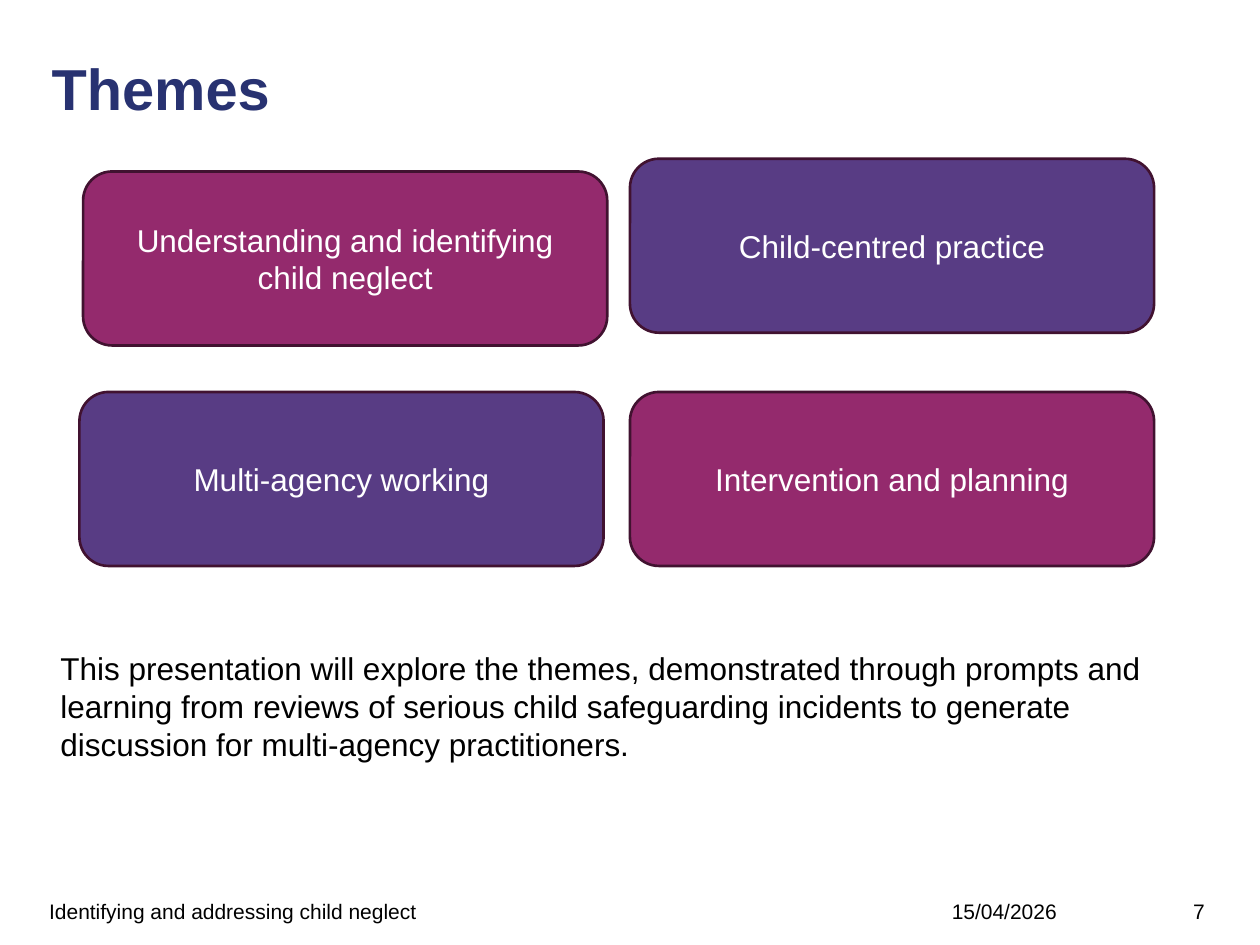
from lxml import etree
from pptx import Presentation
from pptx.dml.color import RGBColor
from pptx.enum import shapes, text
from pptx.oxml import ns
from pptx.util import Pt

NAVY = RGBColor(0x28, 0x32, 0x71)
MAGENTA = RGBColor(0x94, 0x2A, 0x6D)
PURPLE = RGBColor(0x58, 0x3C, 0x84)
OUTLINE = RGBColor(0x41, 0x12, 0x30)
BLACK = RGBColor(0, 0, 0)
WHITE = RGBColor(0xFF, 0xFF, 0xFF)


def place(shape, left, top, width, height):
    shape.left, shape.top, shape.width, shape.height = map(Pt, (left, top, width, height))


def write(shape, words, size=18, color=BLACK, bold=False, align=text.PP_ALIGN.LEFT,
          anchor=text.MSO_ANCHOR.MIDDLE, inset=0, line_spacing=1.0, after=0, plain=False):
    """Fill the shape with one paragraph; plain removes an inherited bullet."""
    frame = shape.text_frame
    frame.word_wrap = True
    frame.auto_size = text.MSO_AUTO_SIZE.NONE
    frame.vertical_anchor = anchor
    frame.margin_left = frame.margin_right = Pt(inset)
    frame.margin_top = frame.margin_bottom = Pt(inset / 2)
    paragraph = frame.paragraphs[0]
    paragraph.text = words
    paragraph.alignment = align
    paragraph.line_spacing = line_spacing
    paragraph.space_before = Pt(0)
    paragraph.space_after = Pt(after)
    if plain:
        properties = paragraph._p.get_or_add_pPr()
        properties.set("marL", "0")
        properties.set("indent", "0")
        etree.SubElement(properties, ns.qn("a:buNone"))
    font = paragraph.runs[0].font
    font.name, font.size, font.bold = "Arial", Pt(size), bold
    font.color.rgb = color


presentation = Presentation()
presentation.slide_width, presentation.slide_height = Pt(720), Pt(540)
slide = presentation.slides.add_slide(presentation.slide_layouts[1])

title, body = slide.placeholders
place(title, 29.5, 34.5, 662, 85)
write(title, "Themes", size=33, color=NAVY, bold=True,
      anchor=text.MSO_ANCHOR.TOP, line_spacing=0.9)

place(body, 34.5, 371, 662, 85)
write(body, "This presentation will explore the themes, demonstrated through prompts and "
      "learning from reviews of serious child safeguarding incidents to generate "
      "discussion for multi-agency practitioners.",
      anchor=text.MSO_ANCHOR.TOP, after=8.5, plain=True)

themes = [
    ("Understanding and identifying child neglect", 47.5, 98, MAGENTA),
    ("Child-centred practice", 360, 90.7, PURPLE),
    ("Multi-agency working", 45.4, 224, PURPLE),
    ("Intervention and planning", 360, 224, MAGENTA),
]
for theme, left, top, fill in themes:
    card = slide.shapes.add_shape(shapes.MSO_SHAPE.ROUNDED_RECTANGLE,
                                  Pt(left), Pt(top), Pt(299.5), Pt(99.4))
    card.shadow.inherit = False
    card.fill.solid()
    card.fill.fore_color.rgb = fill
    card.line.color.rgb = OUTLINE
    card.line.width = Pt(1.5)
    write(card, theme, color=WHITE, align=text.PP_ALIGN.CENTER, inset=7.2)

footers = [
    ("Identifying and addressing child neglect", 28.1, 425.5, text.PP_ALIGN.LEFT),
    ("15/04/2026", 462.2, 141.8, text.PP_ALIGN.RIGHT),
    ("7", 681.8, 28, text.PP_ALIGN.LEFT),
]
for words, left, width, align in footers:
    footer = slide.shapes.add_textbox(Pt(left), Pt(513.4), Pt(width), Pt(14.4))
    write(footer, words, size=12, align=align)

presentation.save("out.pptx")
